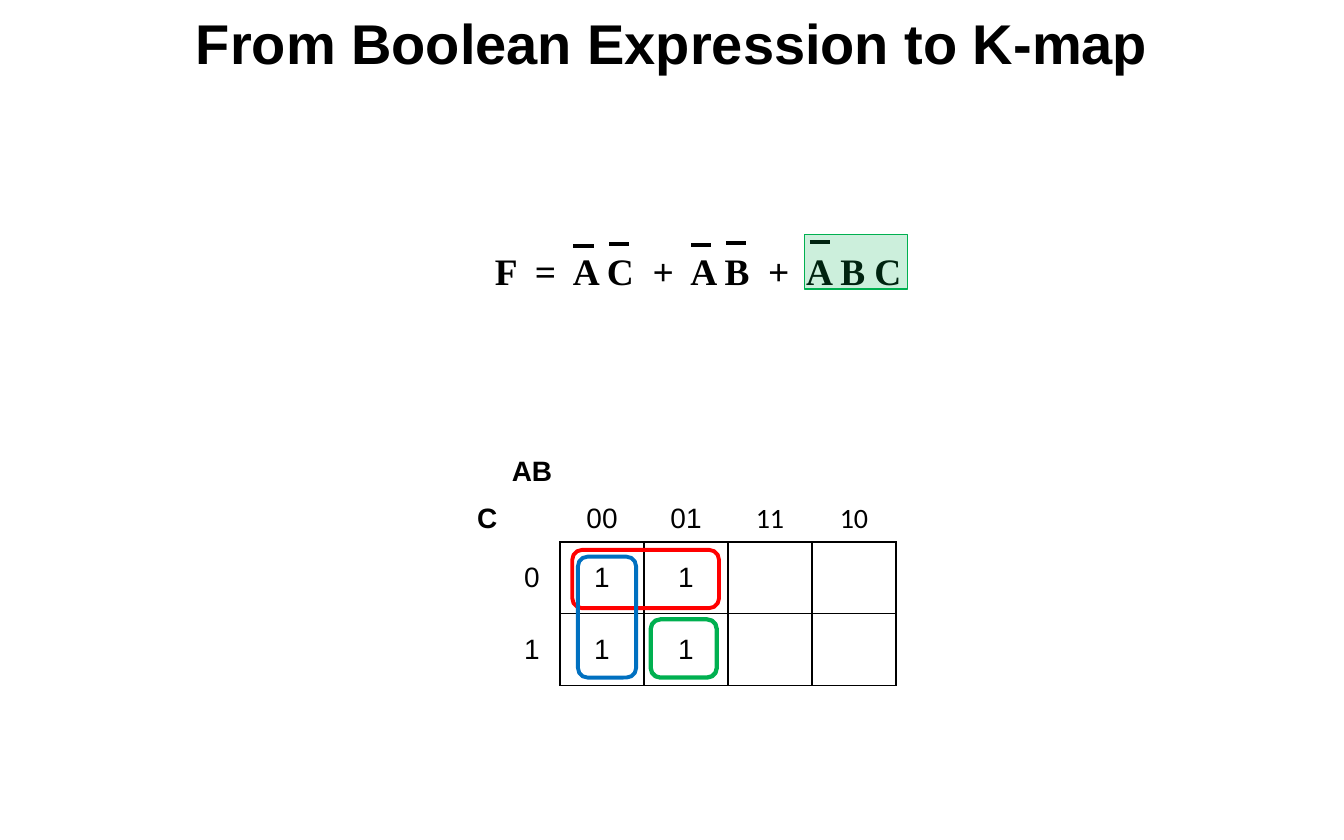
from lxml.etree import SubElement
from pptx import Presentation
from pptx.dml.color import RGBColor
from pptx.enum.shapes import MSO_CONNECTOR, MSO_SHAPE
from pptx.enum.text import MSO_ANCHOR, PP_ALIGN
from pptx.oxml.ns import qn
from pptx.util import Inches, Pt

COLUMNS = [0.5, 0.5, 0.75, 0.75, 0.75, 0.75]
ROWS = [0.42, 0.42, 0.64, 0.64]
KMAP = [
    ["", "AB", "", "", "", ""],
    ["C", "", "00", "01", "11", "10"],
    ["", "0", "1", "1", "", ""],
    ["", "1", "1", "1", "", ""],
]


def color(hex_value):
    return RGBColor.from_string(hex_value)


def write(tf, text, size=18, font="Arial", bold=False, align=PP_ALIGN.CENTER):
    p = tf.paragraphs[0]
    p.alignment = align
    r = p.add_run()
    r.text = text
    r.font.size = Pt(size)
    r.font.name = font
    r.font.bold = bold
    r.font.color.rgb = color("000000")


def add_text(shapes, text, x, y, w, h, wrap=True, anchor=MSO_ANCHOR.TOP, **fmt):
    tf = shapes.add_textbox(Inches(x), Inches(y), Inches(w), Inches(h)).text_frame
    tf.word_wrap = wrap
    tf.vertical_anchor = anchor
    write(tf, text, **fmt)


def add_bar(shapes, x, y, length=0.18):
    line = shapes.add_connector(MSO_CONNECTOR.STRAIGHT, Inches(x), Inches(y),
                                Inches(x + length), Inches(y))
    line.line.color.rgb = color("000000")
    line.line.width = Pt(2.5)
    SubElement(line._element.spPr, qn("a:effectLst"))


def add_box(shapes, kind, x, y, w, h, line, width, fill=None, alpha=100):
    sp = shapes.add_shape(kind, Inches(x), Inches(y), Inches(w), Inches(h))
    sp.shadow.inherit = False
    sp.line.color.rgb = color(line)
    sp.line.width = Pt(width)
    if fill:
        sp.fill.solid()
        sp.fill.fore_color.rgb = color(fill)
        rgb = sp._element.spPr.find(qn("a:solidFill")).find(qn("a:srgbClr"))
        SubElement(rgb, qn("a:alpha"), val=str(alpha * 1000))
    else:
        sp.fill.background()


def set_border(cell, side, hex_value, width):
    ln = SubElement(cell._tc.get_or_add_tcPr(), qn("a:ln" + side), w=str(Pt(width)))
    SubElement(SubElement(ln, qn("a:solidFill")), qn("a:srgbClr"), val=hex_value)


def format_cell(cell, row, col):
    # Only edges that touch the 2 x 4 value grid are black
    neighbours = {"L": (row, col - 1), "R": (row, col + 1),
                  "T": (row - 1, col), "B": (row + 1, col)}
    for side, neighbour in neighbours.items():
        on_grid = any(r in (2, 3) and 2 <= c <= 5 for r, c in [(row, col), neighbour])
        thick = (row, side) in [(0, "B"), (1, "T")]
        set_border(cell, side, "000000" if on_grid else "FFFFFF", 3 if thick else 1)
    cell.fill.solid()
    cell.fill.fore_color.rgb = color("FFFFFF")
    cell.vertical_anchor = MSO_ANCHOR.MIDDLE
    cell.margin_left = cell.margin_right = cell.margin_top = cell.margin_bottom = 0


def add_kmap(shapes, x, y):
    table = shapes.add_table(len(ROWS), len(COLUMNS), Inches(x), Inches(y),
                             Inches(sum(COLUMNS)), Inches(sum(ROWS))).table
    table.first_row = table.horz_banding = False
    for column, width in zip(table.columns, COLUMNS):
        column.width = Inches(width)
    for row, height in zip(table.rows, ROWS):
        row.height = Inches(height)
    for i, texts in enumerate(KMAP):
        for j, text in enumerate(texts):
            cell = table.cell(i, j)
            format_cell(cell, i, j)
            if text:
                write(cell.text_frame, text, bold=text.isalpha(),
                      font="Calibri" if text in ("11", "10") else "Arial")
    table.cell(1, 0).margin_left = Inches(0.2)


def main():
    prs = Presentation()
    prs.slide_width, prs.slide_height = Inches(12), Inches(7.5)
    s = prs.slides.add_slide(prs.slide_layouts[6])

    # Title
    add_text(s.shapes, "From Boolean Expression to K-map", 1, 0, 10, 0.75,
             anchor=MSO_ANCHOR.MIDDLE, size=36, bold=True)

    # Karnaugh map
    add_kmap(s.shapes, 4, 4)

    # Expression with complement bars
    expression = s.shapes.add_group_shape().shapes
    add_text(expression, "F  =  A C  +  A B  +  A B C", 4.32, 2.17, 3.87, 0.5,
             wrap=False, size=24, font="Times New Roman", bold=True,
             align=PP_ALIGN.LEFT)
    for x, y in [(5.12, 2.2), (5.44, 2.18), (6.17, 2.19), (6.48, 2.17), (7.23, 2.16)]:
        add_bar(expression, x, y)

    # Highlighted term
    add_box(s.shapes, MSO_SHAPE.RECTANGLE, 7.18, 2.09, 0.92, 0.49,
            "00B050", 0.75, fill="00B050", alpha=20)

    # Loops around the map groups
    for x, y, w, h, line, width in [
        (5.11, 4.91, 1.31, 0.52, "FF0000", 2.5),
        (5.16, 4.97, 0.52, 1.08, "0070C0", 2.5),
        (5.81, 5.53, 0.59, 0.52, "00B050", 2.75),
    ]:
        add_box(s.shapes, MSO_SHAPE.ROUNDED_RECTANGLE, x, y, w, h, line, width)

    prs.save("out.pptx")


if __name__ == "__main__":
    main()
